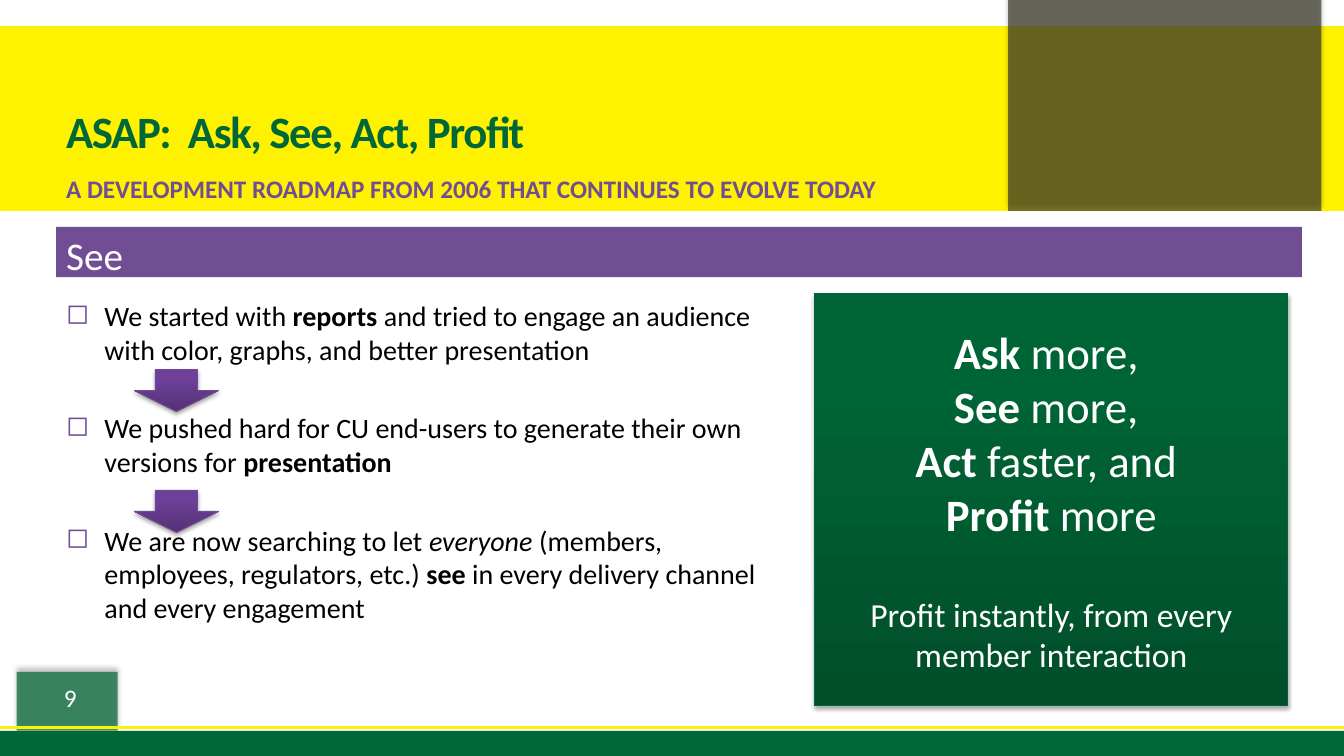
from lxml import etree
from pptx import Presentation
from pptx.dml.color import RGBColor
from pptx.enum.shapes import MSO_CONNECTOR, MSO_SHAPE
from pptx.enum.text import MSO_ANCHOR, PP_ALIGN
from pptx.oxml import parse_xml
from pptx.oxml.ns import nsdecls, qn
from pptx.util import Emu, Inches, Pt

RECT, DOWN_ARROW = MSO_SHAPE.RECTANGLE, MSO_SHAPE.DOWN_ARROW
STRAIGHT = MSO_CONNECTOR.STRAIGHT
LEFT, CENTER = PP_ALIGN.LEFT, PP_ALIGN.CENTER
TOP, MIDDLE, BOTTOM = MSO_ANCHOR.TOP, MSO_ANCHOR.MIDDLE, MSO_ANCHOR.BOTTOM

GREEN = RGBColor(0x00, 0x68, 0x38)
YELLOW = RGBColor(0xFF, 0xF2, 0x00)
OLIVE = RGBColor(0x3E, 0x3D, 0x2D)
PURPLE = RGBColor(0x71, 0x4D, 0x94)
PANEL_EDGE = RGBColor(0x00, 0x66, 0x37)
ARROW_EDGE = RGBColor(0x6F, 0x4A, 0x92)
BLACK = RGBColor(0x00, 0x00, 0x00)
WHITE = RGBColor(0xFF, 0xFF, 0xFF)
PANEL_SHADES = ((0, RGBColor(0x00, 0x4E, 0x2A)), (80, RGBColor(0x00, 0x65, 0x36)),
                (100, RGBColor(0x00, 0x65, 0x37)))
ARROW_SHADES = ((0, RGBColor(0x54, 0x32, 0x76)), (80, RGBColor(0x6E, 0x40, 0x9A)),
                (100, RGBColor(0x6E, 0x3F, 0x9C)))

FONT = "Calibri"
COLS, ROWS = 160, 90  # grid of square cells over the whole slide
SLIDE_W, SLIDE_H = Inches(13.333), Inches(7.5)
CELL = SLIDE_H / ROWS

UPWARD_SHADOW = (4, 3, 270)  # blur, distance, direction
SOFT_SHADOW = (3.1, 1.8, 90)


def emu(*cells):
    return [Emu(round(n * CELL)) for n in cells]


def add_shadow(shape, blur, distance, direction):
    properties = shape._element.spPr
    for empty in properties.findall(qn("a:effectLst")):
        properties.remove(empty)
    properties.append(parse_xml(
        f'<a:effectLst {nsdecls("a")}><a:outerShdw blurRad="{Pt(blur)}" dist="{Pt(distance)}" '
        f'dir="{direction * 60000}" algn="ctr" rotWithShape="0"><a:srgbClr val="000000">'
        '<a:alpha val="35000"/></a:srgbClr></a:outerShdw></a:effectLst>'))


def add_block(slide, box, color, kind=RECT, alpha=None, shadow=None):
    block = slide.shapes.add_shape(kind, *emu(*box))
    block.fill.solid()
    block.fill.fore_color.rgb = color
    block.line.fill.background()
    block.shadow.inherit = False
    if alpha:
        tint = block._element.spPr.find(qn("a:solidFill"))[0]
        etree.SubElement(tint, qn("a:alpha"), val=str(alpha * 1000))
    if shadow:
        add_shadow(block, *shadow)
    return block


def add_shaded(slide, box, shades, edge, kind=RECT):
    shaded = add_block(slide, box, edge, kind, shadow=SOFT_SHADOW)
    stops = "".join(f'<a:gs pos="{pos * 1000}"><a:srgbClr val="{color}"/></a:gs>'
                    for pos, color in shades)
    properties = shaded._element.spPr
    properties.replace(properties.find(qn("a:solidFill")), parse_xml(
        f'<a:gradFill {nsdecls("a")} rotWithShape="1"><a:gsLst>{stops}</a:gsLst>'
        '<a:lin ang="16200000" scaled="0"/></a:gradFill>'))
    shaded.line.color.rgb = edge
    shaded.line.width = Pt(0.75)
    return shaded


def add_text_box(slide, box):
    return slide.shapes.add_textbox(*emu(*box))


def setup_frame(shape, anchor=TOP):
    frame = shape.text_frame
    frame.word_wrap = True
    frame.vertical_anchor = anchor
    return frame


def add_run(paragraph, text, size, color, bold=False, italic=False):
    run = paragraph.add_run()
    run.text = text
    run.font.name, run.font.size = FONT, Pt(size)
    run.font.color.rgb = color
    run.font.bold, run.font.italic = bold, italic
    return run


def write_line(shape, text, size, color, bold=False, align=LEFT, anchor=TOP):
    paragraph = setup_frame(shape, anchor).paragraphs[0]
    paragraph.alignment = align
    return add_run(paragraph, text, size, color, bold)


def draw_header(slide, box):
    x, y, w, h = box
    # Yellow band and the dark tab over its right end
    add_block(slide, (x, y + 3.1, w, h - 3.1), YELLOW)
    add_block(slide, (x + 120, y, 37.3, h), OLIVE, alpha=70, shadow=UPWARD_SHADOW)
    # Subtitle and title
    write_line(add_text_box(slide, (x + 6.7, y + 20, 144, 5)),
               "A DEVELOPMENT ROADMAP FROM 2006 THAT CONTINUES TO EVOLVE TODAY",
               18, PURPLE, bold=True)
    title = write_line(add_text_box(slide, (x + 6.7, y + 11, 110.6, 8.4)),
                       "ASAP:  Ask, See, Act, Profit", 32, GREEN, bold=True, anchor=BOTTOM)
    title.font._element.set("spc", "-100")


def draw_footer(slide, box):
    x, y, w, h = box
    # Green strip, page number tab, yellow rule
    add_block(slide, (x, y + h - 3, w, 3), GREEN)
    add_block(slide, (x + 2, y, 12, 7), GREEN, alpha=70, shadow=UPWARD_SHADOW)
    rule_y = y + h - 3.4
    rule = slide.shapes.add_connector(STRAIGHT, *emu(x, rule_y, x + w, rule_y))
    rule.line.color.rgb = YELLOW
    rule.line.width = Pt(2.25)
    etree.SubElement(rule._element.spPr, qn("a:effectLst"))
    write_line(add_text_box(slide, (x + 3, y + 0.6, 10.7, 4.8)), "9", 18, WHITE, align=CENTER)


def draw_section_bar(slide, box):
    write_line(add_block(slide, box, PURPLE), "See", 28, WHITE)


def draw_steps(slide, box):
    x, y, w, h = box
    steps = (
        (("We started with ", ""), ("reports", "b"),
         (" and tried to engage an audience with color, graphs, and better presentation", "")),
        (("We pushed hard for CU end-users to generate their own versions for ", ""),
         ("presentation", "b")),
        (("We are now searching to let ", ""), ("everyone ", "i"),
         ("(members, employees, regulators, etc.) ", ""), ("see ", "b"),
         ("in every delivery channel and every engagement", "")),
    )
    # Bulleted steps
    frame = setup_frame(add_text_box(slide, box))
    for index, step in enumerate(steps):
        paragraph = frame.add_paragraph() if index else frame.paragraphs[0]
        properties = paragraph._p.get_or_add_pPr()
        indent = Inches(0.38)
        properties.set("marL", str(indent))
        properties.set("indent", str(-indent))
        color = etree.SubElement(properties, qn("a:buClr"))
        etree.SubElement(color, qn("a:srgbClr"), val=str(PURPLE))
        etree.SubElement(properties, qn("a:buChar"), char="◻")
        if index:
            paragraph.space_before = Pt(32)
        for text, style in step:
            add_run(paragraph, text, 20, BLACK, style == "b", style == "i")
    # Arrows from one step to the next
    for drop in (9, 23.4):
        add_shaded(slide, (x + 9.3, y + drop, 10, 5), ARROW_SHADES, ARROW_EDGE, DOWN_ARROW)


def draw_motto(slide, box):
    frame = setup_frame(add_shaded(slide, box, PANEL_SHADES, PANEL_EDGE), MIDDLE)
    motto = frame.paragraphs[0]
    promises = (("Ask", " more, "), ("See", " more, "), ("Act", " faster, and "),
                ("Profit", " more"))
    for index, (verb, rest) in enumerate(promises):
        if index:
            motto.add_line_break()
        add_run(motto, verb, 32, WHITE, bold=True)
        add_run(motto, rest, 32, WHITE)
    summary = frame.add_paragraph()
    summary.space_before = Pt(38.4)
    add_run(summary, "Profit instantly, from every member interaction", 24, WHITE)
    motto.alignment = summary.alignment = CENTER


def main():
    deck = Presentation()
    deck.slide_width, deck.slide_height = SLIDE_W, SLIDE_H
    slide = deck.slides.add_slide(deck.slide_layouts[6])
    draw_header(slide, (0, 0, COLS, 25.1))
    draw_footer(slide, (0, 80, COLS, 10))
    draw_section_bar(slide, (6.7, 27, 148.3, 6))
    draw_steps(slide, (6.7, 35, 87.4, 40))
    draw_motto(slide, (97, 35, 56.3, 49))
    deck.save("out.pptx")


if __name__ == "__main__":
    main()
